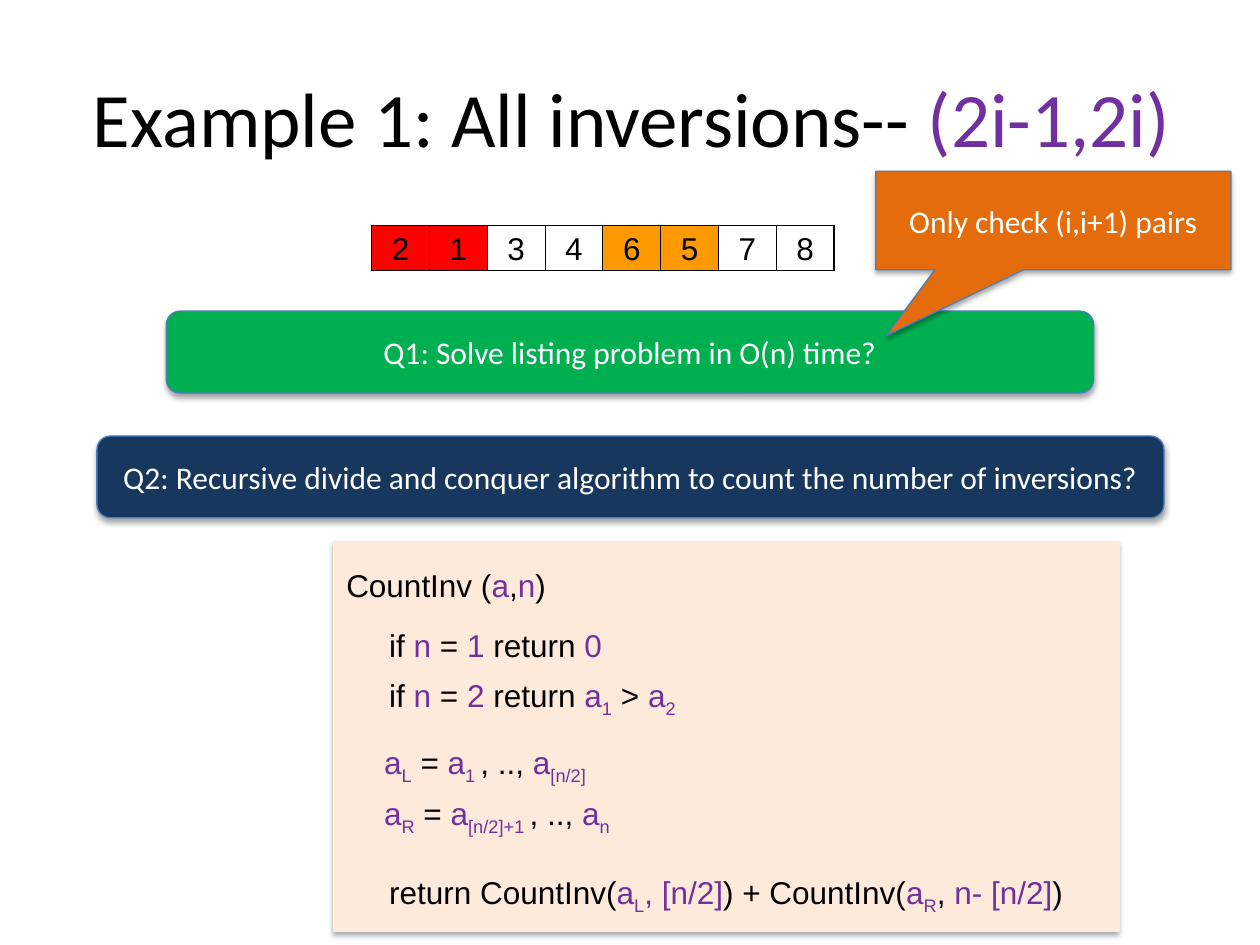
from lxml import etree
from pptx import Presentation
from pptx import util as u
from pptx.dml.color import RGBColor
from pptx.enum import shapes, text
from pptx.oxml import ns

HUES = {"black": "000000", "white": "FFFFFF", "purple": "7030A0",
        "red": "FF0000", "amber": "FF9900", "green": "00B050",
        "navy": "17375E", "orange": "E46C0A", "peach": "FDEADA",
        "edge": "4B7EBC"}
KINDS = {"k": ("black", None), "p": ("purple", None), "s": ("purple", "-25000")}
SHAPE = shapes.MSO_SHAPE
MID = {"vertical_anchor": text.MSO_ANCHOR.MIDDLE, "word_wrap": True}
CELL = {"vertical_anchor": text.MSO_ANCHOR.BOTTOM,
        **{f"margin_{side}": u.Pt(2.2) for side in ("left", "right", "top", "bottom")}}
CODE = [
    (190.8, 319.7, 129.6, "k:CountInv (|p:a|k:,|p:n|k:)"),
    (215.3, 354.2, 138.2, "k:if |p:n|k: = |p:1|k: return|p: 0"),
    (215.3, 383, 181.4, "k:if |p:n|k: = |p:2|k: return |p:a|s:1|k: > |p:a|s:2"),
    (212.4, 421.2, 137.5, "p:a|s:L|k: = |p:a|s:1 |k:, .., |p:a|s:[n/2]"),
    (212.4, 450, 153.4, "p:a|s:R|k: = |p:a|s:[n/2]+1 |k:, .., |p:a|s:n"),
    (215.3, 495.4, 424.8,
     "k:return CountInv(|p:a|s:L|p:, [n/2]|k:) + CountInv("
     "|p:a|s:R|k:, |p:n- [n/2]|k:)"),
]


def hue(name):
    """Look up a named colour."""
    return RGBColor.from_string(HUES[name])


def pts(*vals):
    """Turn numbers into lengths in points."""
    return [u.Pt(val) for val in vals]


def style(item, form):
    """Set each format value on an object."""
    for key, val in form.items():
        setattr(item, key, val)


def node(tag, root, **atts):
    """Add an XML child in the drawing namespace."""
    return etree.SubElement(root, ns.qn(tag), atts)


def add_run(para, words, name, face="Arial", size=18, base=None):
    """Add one coloured run to a paragraph."""
    run = para.add_run()
    run.text = words
    style(run.font, {"name": face, "size": u.Pt(size), "bold": False})
    run.font.color.rgb = hue(name)
    if base:
        run.font._element.set("baseline", base)


def add_title(slide, runs):
    """Fill and place the title."""
    title = slide.shapes.title
    style(title, dict(zip(("left", "top", "width", "height"),
                          pts(36.7, 21.6, 648, 90))))
    style(title.text_frame, MID)
    para = title.text_frame.paragraphs[0]
    para.alignment = text.PP_ALIGN.CENTER
    for words, name in runs:
        add_run(para, words, name, "Calibri", 44)


def add_row(slide, cells):
    """Draw the array as a one-row table."""
    frame = slide.shapes.add_table(1, len(cells), *pts(212.4, 128.9, 264.2, 25.9))
    table = frame.table
    style(table, {"first_row": False, "horz_banding": False})
    for col, (words, name) in enumerate(cells):
        table.columns[col].width = u.Pt(33.03)
        cell = table.cell(0, col)
        style(cell, CELL)
        if name:
            cell.fill.solid()
            cell.fill.fore_color.rgb = hue(name)
        else:
            cell.fill.background()
        para = cell.text_frame.paragraphs[0]
        para.alignment = text.PP_ALIGN.CENTER
        add_run(para, words, "black")
        props = cell._tc.get_or_add_tcPr()
        for spot, side in enumerate("LRTB"):
            line = node(f"a:ln{side}", props, w=str(u.Pt(0.75)))
            fill = node("a:solidFill", line)
            node("a:srgbClr", fill, val=HUES["black"])
            props.insert(spot, line)


def add_box(home, kind, area, name, edge="edge", words=None, adjust=()):
    """Draw a filled shape with a soft shadow and a label."""
    box = home.shapes.add_shape(kind, *pts(*area))
    for spot, val in enumerate(adjust):
        box.adjustments[spot] = val
    box.fill.solid()
    box.fill.fore_color.rgb = hue(name)
    box.line.color.rgb = hue(edge)
    box.line.width = u.Pt(0.75)
    box.shadow.inherit = False
    glow = node("a:outerShdw", box._element.spPr.find(ns.qn("a:effectLst")),
                blurRad=str(u.Pt(3.1)), dist=str(u.Pt(1.8)),
                dir="5400000", rotWithShape="0")
    node("a:alpha", node("a:srgbClr", glow, val=HUES["black"]), val="35000")
    if words:
        style(box.text_frame, MID)
        para = box.text_frame.paragraphs[0]
        para.alignment = text.PP_ALIGN.CENTER
        add_run(para, words, "white", "Calibri")


def add_code(home, left, top, width, marks):
    """Add one line of code from marked runs."""
    frame = home.shapes.add_textbox(*pts(left, top, width, 29)).text_frame
    style(frame, {"word_wrap": False,
                  "auto_size": text.MSO_AUTO_SIZE.SHAPE_TO_FIT_TEXT})
    for mark in marks.split("|"):
        kind, words = mark.split(":", 1)
        name, base = KINDS[kind]
        add_run(frame.paragraphs[0], words, name, base=base)


def main():
    """Build and save the slide."""
    deck = Presentation()
    style(deck, {"slide_width": u.Pt(720), "slide_height": u.Pt(540)})
    slide = deck.slides.add_slide(deck.slide_layouts[5])
    add_title(slide, [("Example 1: All inversions-- ", "black"),
                      ("(2i-1,2i)", "purple")])
    tints = {"2": "red", "1": "red", "6": "amber", "5": "amber"}
    add_row(slide, [(num, tints.get(num)) for num in "21346578"])
    add_box(slide, SHAPE.ROUNDED_RECTANGLE, (95, 177.8, 530, 46.8), "green",
            words="Q1: Solve listing problem in O(n) time?")
    add_box(slide, SHAPE.ROUNDED_RECTANGLE, (55.4, 249.1, 609.8, 46.8), "navy",
            words="Q2: Recursive divide and conquer algorithm to count "
                  "the number of inversions?")
    add_box(slide, SHAPE.RECTANGULAR_CALLOUT, (500.4, 97.9, 203, 56.2), "orange",
            words="Only check (i,i+1) pairs", adjust=(-0.47, 1.17))
    group = slide.shapes.add_group_shape()
    add_box(group, SHAPE.RECTANGLE, (190.8, 309.6, 448.6, 222.5), "peach", "peach")
    for line in CODE:
        add_code(group, *line)
    deck.save("out.pptx")


if __name__ == "__main__":
    main()
